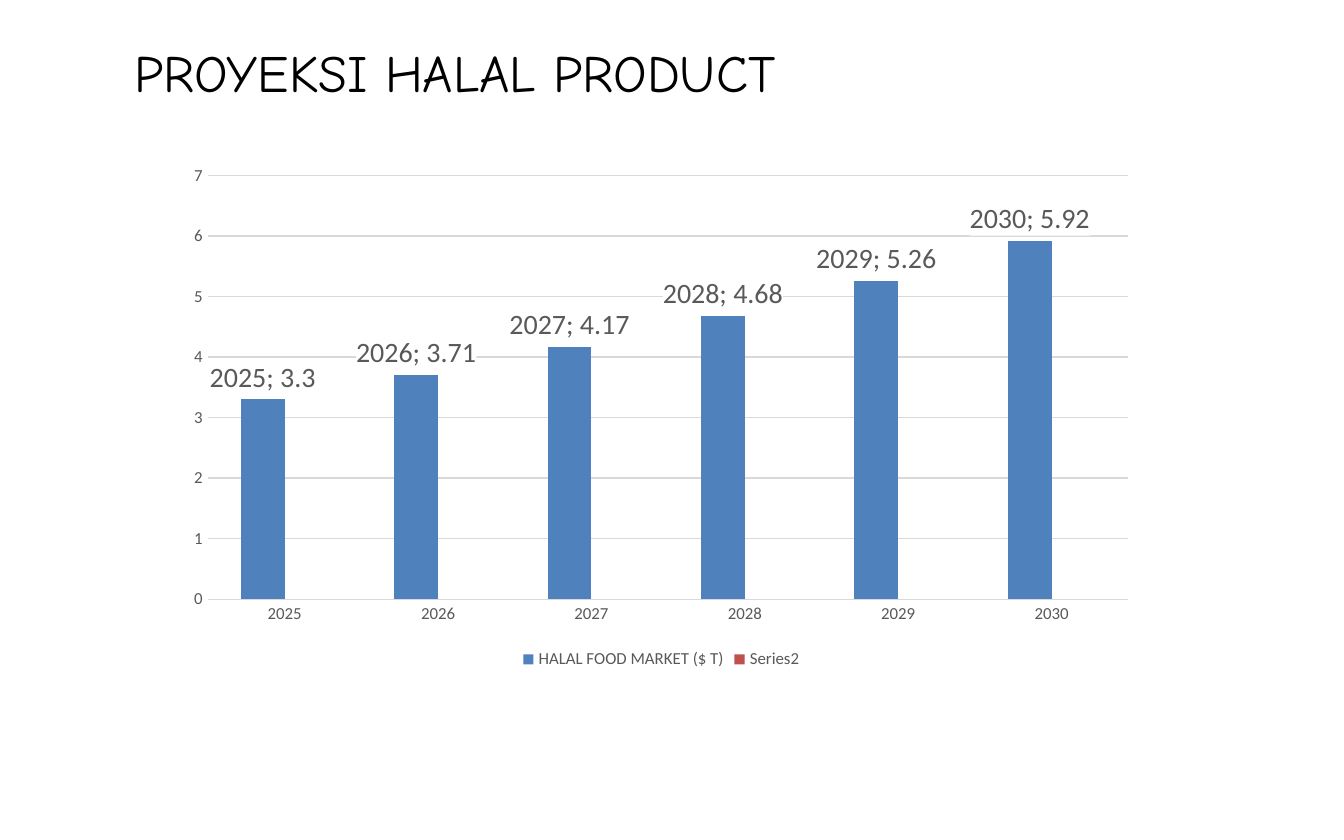
import pptx
import pptx.chart.data
import pptx.dml.color
import pptx.enum.chart
import pptx.enum.text
import pptx.oxml
import pptx.oxml.ns
import pptx.util

HEADING = "PROYEKSI HALAL PRODUCT "
YEARS = ["2025", "2026", "2027", "2028", "2029", "2030"]
MARKETS = [
    ("HALAL FOOD MARKET ($ T)", [3.3, 3.71, 4.17, 4.68, 5.26, 5.92], "market", 15),
    ("Series2", [None] * len(YEARS), "second", 9),
]
COLORS = {
    "heading": "000000",
    "label": "595959",
    "grid": "D9D9D9",
    "market": "4F81BD",
    "second": "C0504D",
    "paper": "FFFFFF",
}
WIDTH, HEIGHT = 10, 6.25
HEADING_AREA = (0, 0.02, 0.69, 0.13)
CHART_AREA = (0.13, 0.185, 0.724, 0.618)


def place(area):
    return [pptx.util.Inches(share * side) for share, side in zip(area, (WIDTH, HEIGHT) * 2)]


def color(key):
    return pptx.dml.color.RGBColor.from_string(COLORS[key])


def style(font, size, key, face="Calibri"):
    font.name = face
    font.size = pptx.util.Pt(size)
    font.bold = False
    font.color.rgb = color(key)


def label_bars(series, size):
    labels = series.data_labels
    labels.show_value = True
    labels.show_category_name = True
    style(labels.font, size, "label")
    labels.position = pptx.enum.chart.XL_LABEL_POSITION.OUTSIDE_END
    names = pptx.oxml.ns.nsdecls("c", "a")
    element = labels._element
    backing = pptx.oxml.parse_xml(
        f'<c:spPr {names}><a:solidFill><a:srgbClr val="{COLORS["paper"]}"/></a:solidFill></c:spPr>'
    )
    element.find(pptx.oxml.ns.qn("c:txPr")).addprevious(backing)
    separator = pptx.oxml.parse_xml(f"<c:separator {names}>; </c:separator>")
    element.find(pptx.oxml.ns.qn("c:showBubbleSize")).addnext(separator)


def add_heading(slide):
    heading = slide.shapes.add_textbox(*place(HEADING_AREA)).text_frame
    heading.word_wrap = True
    heading.vertical_anchor = pptx.enum.text.MSO_ANCHOR.MIDDLE
    heading.text = HEADING
    line = heading.paragraphs[0]
    line.alignment = pptx.enum.text.PP_ALIGN.CENTER
    style(line.runs[0].font, 28, "heading", "Comic Neue")


def add_projection(slide):
    data = pptx.chart.data.CategoryChartData()
    data.categories = YEARS
    for name, values, _, _ in MARKETS:
        data.add_series(name, values)
    kind = pptx.enum.chart.XL_CHART_TYPE.COLUMN_CLUSTERED
    chart = slide.shapes.add_chart(kind, *place(CHART_AREA), data).chart
    style(chart.font, 10, "heading")
    chart.has_title = False
    chart.has_legend = True
    chart.legend.position = pptx.enum.chart.XL_LEGEND_POSITION.BOTTOM
    chart.legend.include_in_layout = False
    style(chart.legend.font, 9, "label")

    for axis in (chart.category_axis, chart.value_axis):
        axis.major_tick_mark = pptx.enum.chart.XL_TICK_MARK.NONE
        axis.minor_tick_mark = pptx.enum.chart.XL_TICK_MARK.NONE
        axis.format.line.fill.background()
        style(axis.tick_labels.font, 9, "label")
    scale = chart.value_axis
    scale.minimum_scale, scale.maximum_scale, scale.major_unit = 0, 7, 1
    scale.has_major_gridlines = True
    scale.major_gridlines.format.line.color.rgb = color("grid")
    scale.major_gridlines.format.line.width = pptx.util.Pt(0.75)

    bars = chart.plots[0]
    bars.gap_width = 150
    bars.overlap = 0
    bars.vary_by_categories = False
    for series, (_, _, key, size) in zip(bars.series, MARKETS):
        series.format.fill.solid()
        series.format.fill.fore_color.rgb = color(key)
        label_bars(series, size)


def main():
    deck = pptx.Presentation()
    deck.slide_width = pptx.util.Inches(WIDTH)
    deck.slide_height = pptx.util.Inches(HEIGHT)
    slide = deck.slides.add_slide(deck.slide_layouts[6])
    add_heading(slide)
    add_projection(slide)
    deck.save("out.pptx")


if __name__ == "__main__":
    main()
